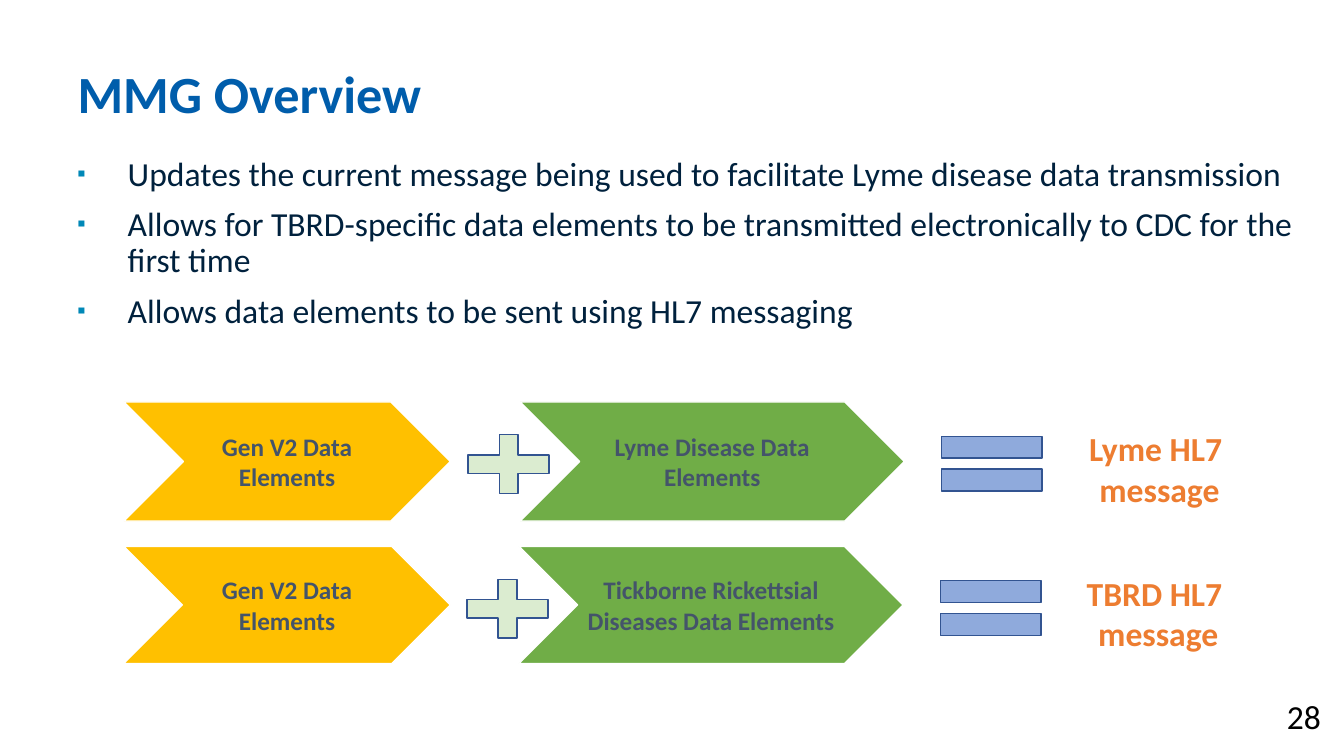
from lxml import etree
from pptx import Presentation
from pptx.dml.color import RGBColor
from pptx.enum.shapes import MSO_SHAPE
from pptx.enum.text import MSO_ANCHOR, MSO_AUTO_SIZE, PP_ALIGN
from pptx.oxml.ns import qn
from pptx.util import Cm, Pt

CHEVRON, PLUS, EQUAL = MSO_SHAPE.CHEVRON, MSO_SHAPE.MATH_PLUS, MSO_SHAPE.MATH_EQUAL
TOP, MIDDLE, BOTTOM = MSO_ANCHOR.TOP, MSO_ANCHOR.MIDDLE, MSO_ANCHOR.BOTTOM
LEFT, CENTER = PP_ALIGN.LEFT, PP_ALIGN.CENTER
NO_FIT = MSO_AUTO_SIZE.NONE
TITLE_ONLY = 5

FONT = "Calibri"
YELLOW, GREEN, WHITE = "FFC000", "70AD47", "FFFFFF"
PALE_GREEN, PALE_BLUE, OUTLINE = "DBECD0", "8FAADC", "325491"
TITLE_BLUE, NAVY, SLATE = "005DAB", "00213D", "44546A"
ORANGE, BLACK, BULLET_BLUE = "ED7D31", "000000", "0088B7"

BULLETS = [
    "Updates the current message being used to facilitate Lyme disease data transmission",
    "Allows for TBRD-specific data elements to be transmitted electronically to CDC for the first time",
    "Allows data elements to be sent using HL7 messaging",
]
# top, chevron height, horizontal shift, added elements, resulting message
EQUATIONS = [
    (10.13, 3.0, 0, "Lyme Disease Data Elements", "Lyme HL7 "),
    (13.77, 2.95, -0.03, "Tickborne Rickettsial Diseases Data Elements", "TBRD HL7 "),
]


def rgb(color):
    return RGBColor.from_string(color)


def set_all(obj, values):
    for name, value in values.items():
        setattr(obj, name, value)


class SlideBuilder:
    def __init__(self, prs):
        self.slide = prs.slides.add_slide(prs.slide_layouts[TITLE_ONLY])

    def fill_text(self, sp, lines, size, color, bold=False, align=LEFT, anchor=TOP, wrap=True, **para):
        """Fill a shape with one formatted paragraph per line."""
        tf = sp.text_frame
        set_all(tf, {"word_wrap": wrap, "auto_size": NO_FIT, "vertical_anchor": anchor})
        for i, line in enumerate(lines):
            p = tf.add_paragraph() if i else tf.paragraphs[0]
            set_all(p, {"alignment": align, **para})
            r = p.add_run()
            r.text = line
            set_all(r.font, {"name": FONT, "size": Pt(size), "bold": bold})
            r.font.color.rgb = rgb(color)

    def title(self, text, box):
        sp = self.slide.shapes.title
        set_all(sp, dict(zip(("left", "top", "width", "height"), map(Cm, box))))
        self.fill_text(sp, [text], 37.3, TITLE_BLUE, True, anchor=BOTTOM, line_spacing=Pt(40))

    def text(self, lines, box, size, color, parent=None, **style):
        sp = (parent or self.slide).shapes.add_textbox(*map(Cm, box))
        self.fill_text(sp, lines, size, color, **style)
        return sp

    def bullets(self, lines, box):
        sp = self.text(lines, box, 24, NAVY, line_spacing=0.9, space_before=Pt(10))
        for p in sp.text_frame.paragraphs:
            pPr = p._p.get_or_add_pPr()
            pPr.set("marL", str(Cm(1.27)))
            pPr.set("indent", str(Cm(-1.27)))
            color = etree.SubElement(pPr, qn("a:buClr"))
            etree.SubElement(color, qn("a:srgbClr"), val=BULLET_BLUE)
            etree.SubElement(pPr, qn("a:buSzPct"), val="70000")
            etree.SubElement(pPr, qn("a:buFont"), typeface=FONT)
            etree.SubElement(pPr, qn("a:buChar"), char="▪")

    def shape(self, parent, kind, box, fill, line, label=None):
        sp = parent.shapes.add_shape(kind, *map(Cm, box))
        sp.shadow.inherit = False
        sp.fill.solid()
        sp.fill.fore_color.rgb = rgb(fill)
        sp.line.color.rgb = rgb(line)
        sp.line.width = Pt(1)
        if label:
            self.fill_text(sp, [label], 18, SLATE, True, CENTER, MIDDLE)

    def equation(self, top, height, shift, added, message):
        """Draw one row: general elements + added elements = message."""
        group = self.slide.shapes.add_group_shape()
        self.shape(group, CHEVRON, (3.12, top, 8.23, height), YELLOW, WHITE, "Gen V2 Data Elements")
        self.text([message, "message"], (27.05 + shift, top + 0.54, 4.34, 2.31), 24, ORANGE,
                  group, bold=True, align=CENTER)
        self.shape(group, CHEVRON, (13.11 + shift, top, 9.68, height), GREEN, WHITE, added)
        self.shape(group, PLUS, (11.43 + shift, top + 0.56, 2.78, 2.02), PALE_GREEN, OUTLINE)
        self.shape(group, EQUAL, (23.27 + shift, top + 0.38, 3.45, 2.35), PALE_BLUE, OUTLINE)


def main():
    prs = Presentation()
    prs.slide_width, prs.slide_height = Cm(33.87), Cm(19.05)
    s = SlideBuilder(prs)
    s.title("MMG Overview", (1.7, 0.91, 30.38, 2.34))
    s.bullets(BULLETS, (1.7, 3.84, 31.57, 12.24))
    for row in EQUATIONS:
        s.equation(*row)
    s.text(["28"], (32.18, 17.42, 1.52, 1.27), 24, BLACK, wrap=False)
    prs.save("out.pptx")


if __name__ == "__main__":
    main()
